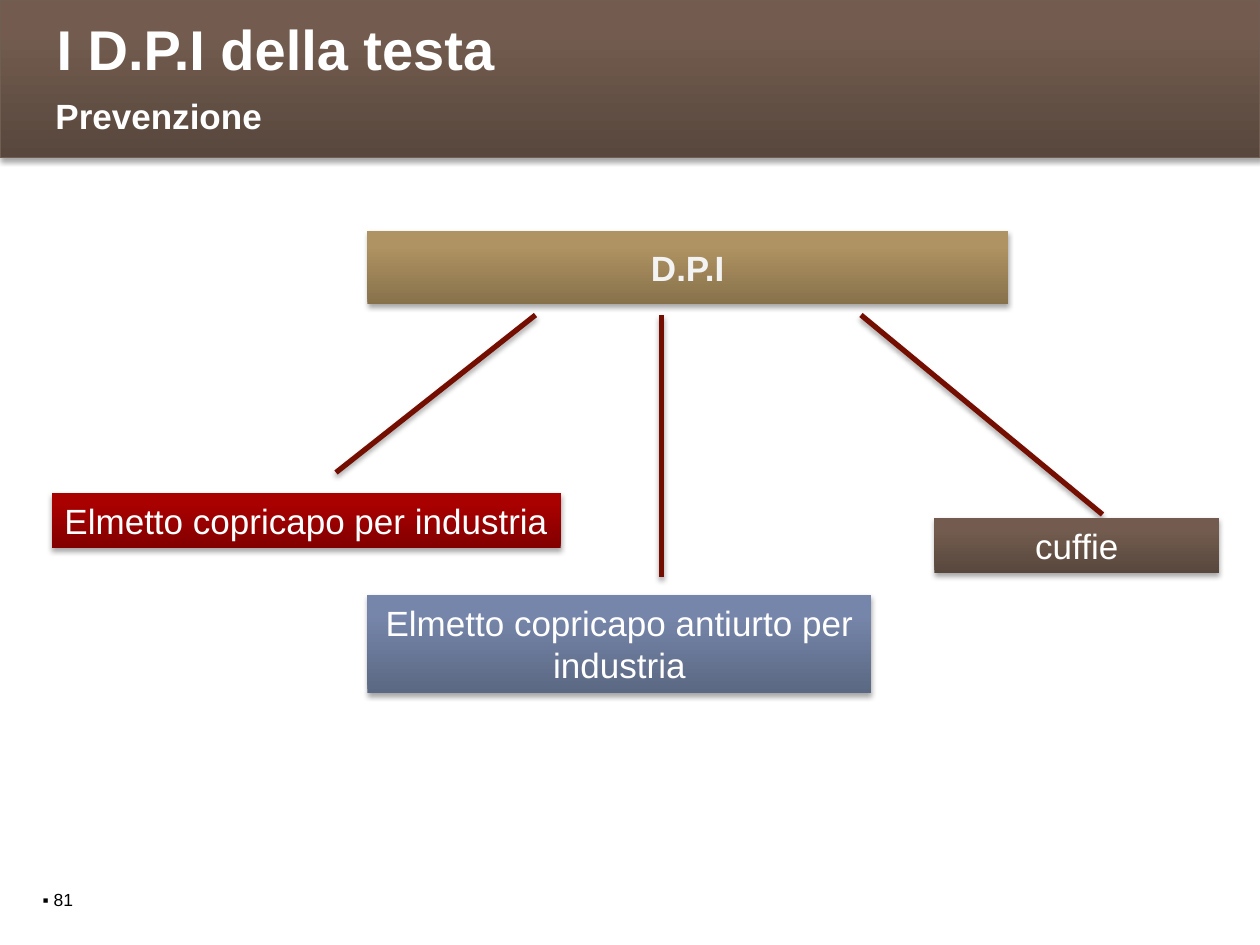
from copy import deepcopy
from typing import NamedTuple

from lxml.etree import SubElement
from pptx import Presentation
from pptx.dml.color import RGBColor
from pptx.enum.shapes import MSO_CONNECTOR, MSO_SHAPE
from pptx.enum.text import MSO_ANCHOR, PP_ALIGN
from pptx.oxml.ns import qn
from pptx.util import Inches, Pt

CELL = Inches(10) / 120

WHITE = RGBColor(0xFF, 0xFF, 0xFF)
PALE = RGBColor(0xF3, 0xF3, 0xF3)
BLACK = RGBColor(0x00, 0x00, 0x00)
DARK_RED = RGBColor(0x73, 0x0E, 0x00)
BAND_EDGE = RGBColor(0x70, 0x5E, 0x53)
BROWN = (RGBColor(0x58, 0x47, 0x3D), RGBColor(0x73, 0x5C, 0x4F), RGBColor(0x74, 0x5C, 0x4F))
GOLD = (RGBColor(0x87, 0x71, 0x4B), RGBColor(0xB0, 0x93, 0x62), RGBColor(0xB2, 0x94, 0x61))
RED = (RGBColor(0x82, 0x00, 0x00), RGBColor(0xA9, 0x00, 0x00), RGBColor(0xA9, 0x00, 0x00))
BLUE = (RGBColor(0x5B, 0x68, 0x83), RGBColor(0x76, 0x86, 0xAA), RGBColor(0x76, 0x87, 0xAB))


class Box(NamedTuple):
    column: float
    row: float
    columns: float
    rows: float

    def inner(self, column, row, columns, rows):
        return Box(self.column + column, self.row + row, columns, rows)

    def point(self, column, row):
        return round((self.column + column) * CELL), round((self.row + row) * CELL)

    def lengths(self):
        return [round(value * CELL) for value in self]


def add_shadow(item):
    effects = SubElement(item._element.spPr, qn("a:effectLst"))
    shadow = SubElement(
        effects, qn("a:outerShdw"),
        blurRad=str(Pt(3.1)), dist=str(Pt(1.8)), dir="5400000", rotWithShape="0",
    )
    color = SubElement(shadow, qn("a:srgbClr"), val="000000")
    SubElement(color, qn("a:alpha"), val="35000")


def fill_gradient(shape, colors):
    shape.fill.gradient()
    shape.fill.gradient_angle = 90
    stop_list = shape._element.spPr.find(qn("a:gradFill")).find(qn("a:gsLst"))
    stop_list.insert(1, deepcopy(stop_list[0]))
    for stop, position, color in zip(shape.fill.gradient_stops, (0, 0.8, 1), colors):
        stop.position = position
        stop.color.rgb = color


def add_panel(page, box, colors):
    panel = page.shapes.add_shape(MSO_SHAPE.RECTANGLE, *box.lengths())
    fill_gradient(panel, colors)
    panel.line.fill.background()
    add_shadow(panel)
    return panel


def write(shape, text, frame_format, para_format, font_format, color):
    frame = shape.text_frame
    para = frame.paragraphs[0]
    span = para.add_run()
    span.text = text
    for target, values in (
        (frame, {"word_wrap": True, **frame_format}),
        (para, para_format),
        (span.font, {"name": "Arial", **font_format}),
    ):
        for name, value in values.items():
            setattr(target, name, value)
    span.font.color.rgb = color


def add_header(page, box):
    band = add_panel(page, box, BROWN)
    band.line.color.rgb = BAND_EDGE
    band.line.width = Pt(0.75)
    title = page.shapes.add_textbox(*box.inner(4.44, 1.44, 111.84, 6.84).lengths())
    write(title, "I D.P.I della testa",
          {"margin_left": Inches(0.08), "margin_right": Inches(0.08),
           "vertical_anchor": MSO_ANCHOR.MIDDLE},
          {"line_spacing": 0.95}, {"size": Pt(32), "bold": True}, WHITE)
    subtitle = page.shapes.add_textbox(*box.inner(3, 8.4, 88.08, 5.16).lengths())
    write(subtitle, "Prevenzione",
          {"margin_left": Inches(0.19), "margin_right": 0},
          {}, {"size": Pt(20), "bold": True}, WHITE)


def add_node(page, box, text, colors, color=WHITE, bold=False, wrap=True):
    write(add_panel(page, box, colors), text,
          {"vertical_anchor": MSO_ANCHOR.MIDDLE, "word_wrap": wrap},
          {"alignment": PP_ALIGN.CENTER}, {"size": Pt(20), "bold": bold}, color)


def add_branch(page, start, end):
    branch = page.shapes.add_connector(MSO_CONNECTOR.STRAIGHT, *start, *end)
    branch.line.color.rgb = DARK_RED
    branch.line.width = Pt(3)
    add_shadow(branch)


def add_diagram(page, box):
    add_node(page, box.inner(35, 7, 61, 7), "D.P.I", GOLD, PALE, bold=True)
    branches = (
        (51, (32, 30), (4.92, 31.92, 48.48, 5.28), "Elmetto copricapo per industria", RED, False),
        (63, (63, 40), (35, 41.64, 48, 9.36), "Elmetto copricapo antiurto per industria", BLUE, True),
        (82, (105, 34), (89, 34.32, 27.12, 5.28), "cuffie", BROWN, True),
    )
    for start_column, end, place, text, colors, wrap in branches:
        add_branch(page, box.point(start_column, 15), box.point(*end))
        add_node(page, box.inner(*place), text, colors, wrap=wrap)


def add_page_number(page, box):
    number = page.shapes.add_textbox(*box.lengths())
    write(number, "▪ 81", {}, {}, {"size": Pt(10)}, BLACK)


def main():
    deck = Presentation()
    deck.slide_width, deck.slide_height = Inches(10), Inches(7.5)
    page = deck.slides.add_slide(deck.slide_layouts[6])
    add_header(page, Box(0, 0, 120, 15))
    add_diagram(page, Box(0, 15, 120, 69))
    add_page_number(page, Box(2.88, 84.12, 17.64, 3.24))
    deck.save("out.pptx")


if __name__ == "__main__":
    main()
